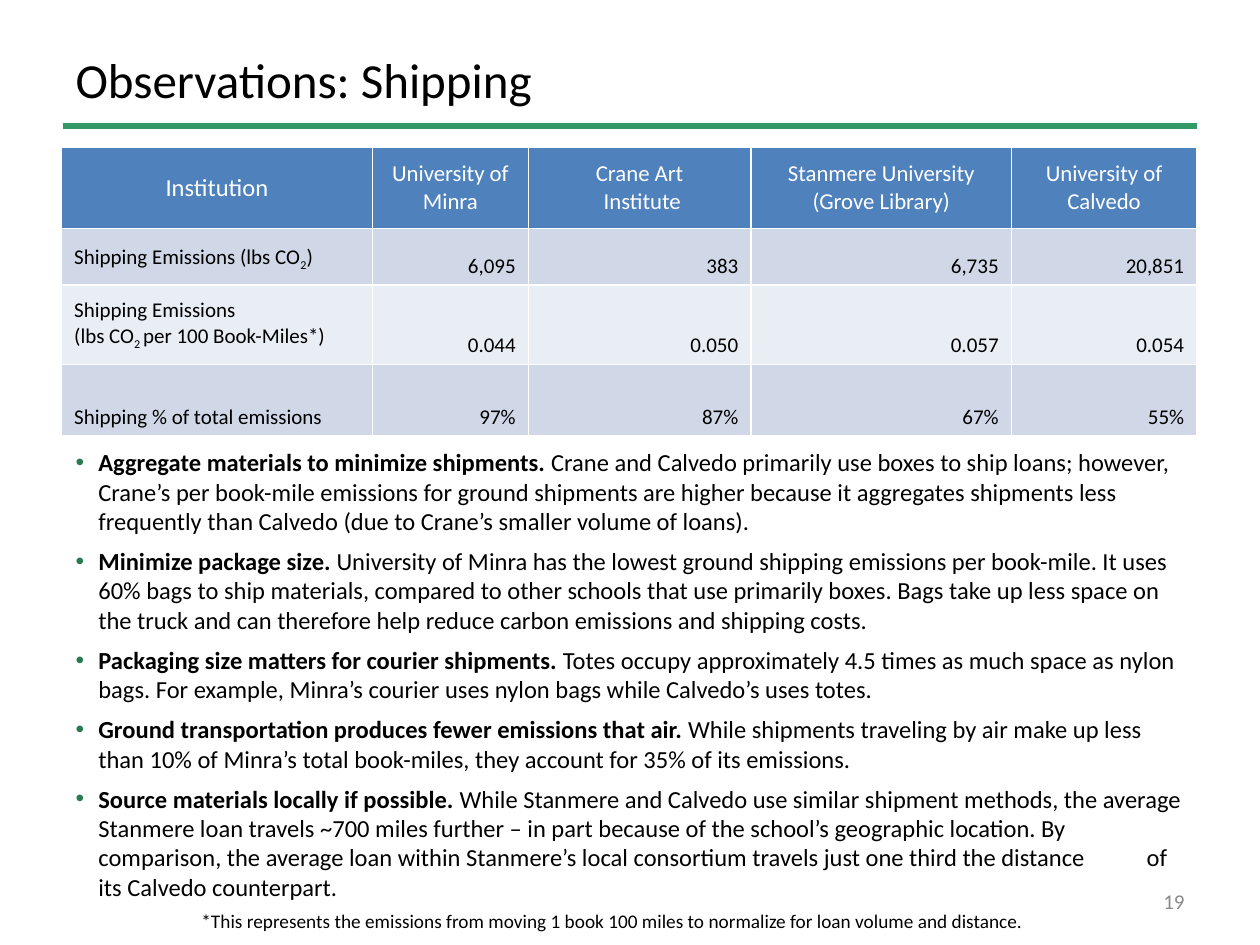
from lxml.etree import SubElement
from pptx import Presentation
from pptx.dml.color import RGBColor
from pptx.enum.shapes import MSO_CONNECTOR
from pptx.enum.text import MSO_ANCHOR, MSO_AUTO_SIZE, PP_ALIGN
from pptx.oxml.ns import qn
from pptx.util import Pt

COLORS = {
    "text": "000000", "header_text": "FFFFFF", "number": "898989",
    "rule": "339966", "bullet": "287A51",
    "header": "4F81BD", "odd_row": "D0D8E8", "even_row": "E9EDF4",
}


def color(name):
    return RGBColor.from_string(COLORS[name])


def format_para(para, size, color_name="text", align=PP_ALIGN.LEFT):
    para.alignment = align
    para.font.name = "Calibri"
    para.font.size = Pt(size)
    para.font.color.rgb = color(color_name)


deck = Presentation()
deck.slide_width, deck.slide_height = Pt(720), Pt(540)
slide = deck.slides.add_slide(deck.slide_layouts[1])

# Title and the rule below it
title = slide.shapes.title
title.left, title.top, title.width, title.height = Pt(36), Pt(0), Pt(648), Pt(90)
title.text_frame.text = "Observations: Shipping"
title.text_frame.vertical_anchor = MSO_ANCHOR.MIDDLE
format_para(title.text_frame.paragraphs[0], 28)

rule = slide.shapes.add_connector(MSO_CONNECTOR.STRAIGHT, Pt(36), Pt(72), Pt(684), Pt(72))
rule.line.color.rgb = color("rule")
rule.line.width = Pt(3)
SubElement(rule._element.spPr, qn("a:effectLst"))

# Shipping table; "_2" marks a subscript 2
ROWS = [
    ["Institution", "University of Minra", "Crane Art\n Institute",
     "Stanmere University (Grove Library)", "University of Calvedo"],
    ["Shipping Emissions (lbs CO_2)", "6,095", "383", "6,735", "20,851"],
    ["Shipping Emissions\n(lbs CO_2 per 100 Book-Miles*)", "0.044", "0.050", "0.057", "0.054"],
    ["Shipping % of total emissions", "97%", "87%", "67%", "55%"],
]
COLUMN_WIDTHS = [177.6, 89.1, 127.2, 148.8, 106]
ROW_HEIGHTS = [46.6, 32.4, 41, 41]

table = slide.shapes.add_table(4, 5, Pt(35.2), Pt(84), Pt(648.7), Pt(161)).table
for column, width in zip(table.columns, COLUMN_WIDTHS):
    column.width = Pt(width)
for row, height in zip(table.rows, ROW_HEIGHTS):
    row.height = Pt(height)

for r, row in enumerate(ROWS):
    for c, text in enumerate(row):
        cell = table.cell(r, c)
        is_header, is_label = r == 0, c == 0
        cell.fill.solid()
        cell.fill.fore_color.rgb = color("header" if is_header else "odd_row" if r % 2 else "even_row")
        cell.vertical_anchor = MSO_ANCHOR.MIDDLE if is_header else MSO_ANCHOR.BOTTOM
        if is_header or (is_label and r < 3):
            cell.margin_top = cell.margin_bottom = Pt(7.2)
        for i, line in enumerate(text.split("\n")):
            frame = cell.text_frame
            para = frame.add_paragraph() if i else frame.paragraphs[0]
            before, subscript, after = line.partition("_2")
            para.add_run().text = before
            if subscript:
                span = para.add_run()
                span.text = "2 " if after.startswith(" ") else "2"
                span._r.get_or_add_rPr().set("baseline", "-25000")
                para.add_run().text = after.lstrip()
            if is_header:
                format_para(para, 14 if is_label else 13, "header_text", PP_ALIGN.CENTER)
                para.font.bold = False
            else:
                format_para(para, 12, align=PP_ALIGN.LEFT if is_label else PP_ALIGN.RIGHT)

# Observations list
OBSERVATIONS = [
    ("Aggregate materials to minimize shipments. ",
     "Crane and Calvedo primarily use boxes to ship loans; however, Crane’s per book-mile "
     "emissions for ground shipments are higher because it aggregates shipments less "
     "frequently than Calvedo (due to Crane’s smaller volume of loans)."),
    ("Minimize package size. ",
     "University of Minra has the lowest ground shipping emissions per book-mile. It uses 60% "
     "bags to ship materials, compared to other schools that use primarily boxes. Bags take up "
     "less space on the truck and can therefore help reduce carbon emissions and shipping costs."),
    ("Packaging size matters for courier shipments. ",
     "Totes occupy approximately 4.5 times as much space as nylon bags. For example, Minra’s "
     "courier uses nylon bags while Calvedo’s uses totes."),
    ("Ground transportation produces fewer emissions that air. ",
     "While shipments traveling by air make up less than 10% of Minra’s total book-miles, they "
     "account for 35% of its emissions."),
    ("Source materials locally if possible. ",
     "While Stanmere and Calvedo use similar shipment methods, the average Stanmere loan travels "
     "~700 miles further – in part because of the school’s geographic location. By \tcomparison, "
     "the average loan within Stanmere’s local consortium travels just one third the distance "
     "\tof its Calvedo counterpart."),
]
body = slide.placeholders[1]
body.left, body.top, body.width, body.height = Pt(36), Pt(252), Pt(648), Pt(269.3)
body.text_frame.auto_size = MSO_AUTO_SIZE.SHAPE_TO_FIT_TEXT
for i, (lead, detail) in enumerate(OBSERVATIONS):
    para = body.text_frame.add_paragraph() if i else body.text_frame.paragraphs[0]
    properties = para._p.get_or_add_pPr()
    properties.set("marL", str(Pt(13)))
    properties.set("indent", str(Pt(-13)))
    bullet_color = SubElement(properties, qn("a:buClr"))
    SubElement(bullet_color, qn("a:srgbClr"), val=COLORS["bullet"])
    SubElement(properties, qn("a:buFont"), typeface="Arial")
    SubElement(properties, qn("a:buChar"), char="•")
    para.space_before, para.space_after = Pt(0), Pt(6)
    format_para(para, 14)
    for text, bold in ((lead, True), (detail, False)):
        span = para.add_run()
        span.text = text
        span.font.bold = bold

# Footnote and page number
NOTE = ("*This represents the emissions from moving 1 book 100 miles "
        "to normalize for loan volume and distance.")
SMALL_TEXTS = [
    (NOTE, (108, 516.2, 498.2, 20.9), 11, "text", PP_ALIGN.LEFT, MSO_ANCHOR.TOP),
    ("19", (516, 500.5, 168, 28.8), 12, "number", PP_ALIGN.RIGHT, MSO_ANCHOR.MIDDLE),
]
for text, bounds, size, color_name, align, anchor in SMALL_TEXTS:
    box = slide.shapes.add_textbox(*map(Pt, bounds))
    box.text_frame.word_wrap = True
    box.text_frame.vertical_anchor = anchor
    box.text_frame.text = text
    format_para(box.text_frame.paragraphs[0], size, color_name, align)

deck.save("out.pptx")
